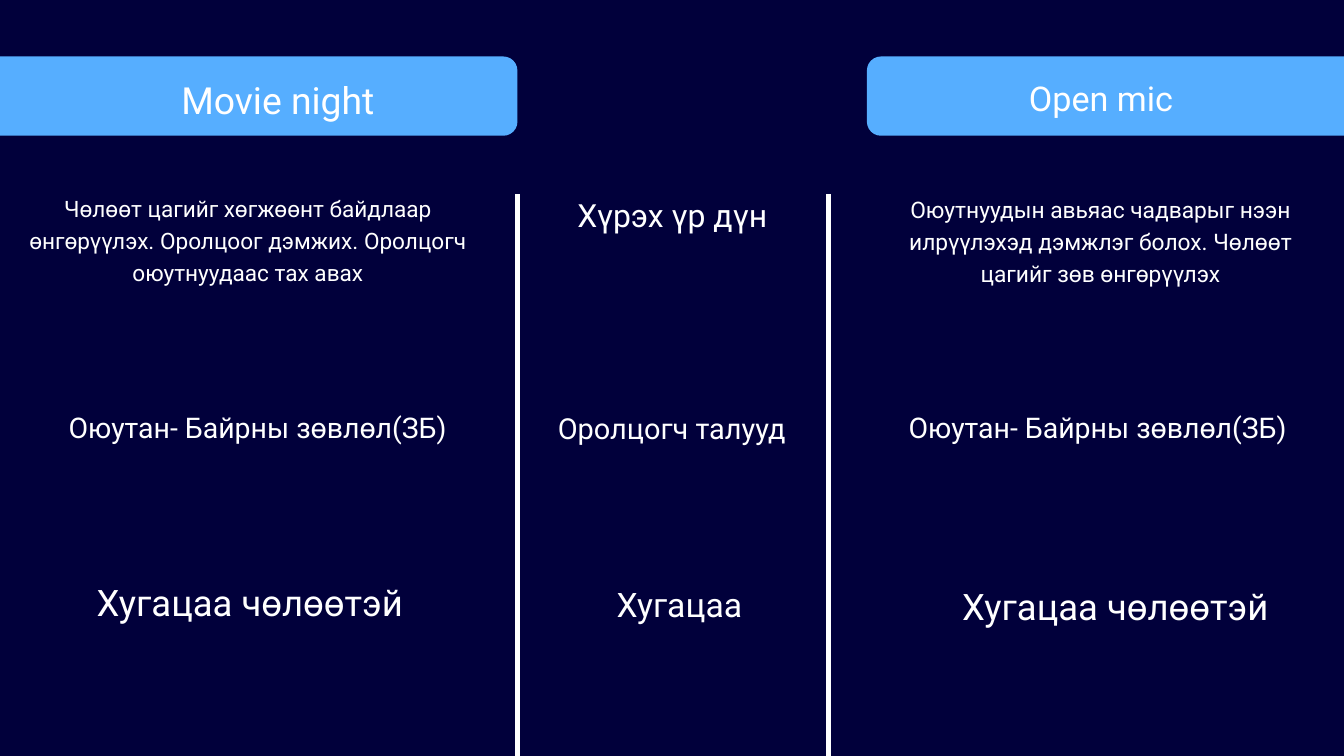
import pptx
import pptx.util
import pptx.dml.color
import pptx.enum.shapes
import pptx.enum.text
import pptx.oxml.ns
import lxml.etree

Inches = pptx.util.Inches
Pt = pptx.util.Pt


def color(hex_string):
    return pptx.dml.color.RGBColor.from_string(hex_string)


NAVY, SKY, WHITE = "01003B", "56AEFF", "FFFFFF"
LINE_SPACING = 1.4
BANNER_WIDTH, BANNER_HEIGHT, BANNER_RADIUS = 8.41, 1.18, 0.21
COUNCIL = "Оюутан- Байрны зөвлөл(ЗБ)"
FREE_TIME = "Хугацаа чөлөөтэй"

deck = pptx.Presentation()
deck.slide_width = Inches(20)
deck.slide_height = Inches(11.25)
page = deck.slides.add_slide(deck.slide_layouts[6])
page.background.fill.solid()
page.background.fill.fore_color.rgb = color(NAVY)

for x in (7.7, 12.33):
    divider = page.shapes.add_connector(
        pptx.enum.shapes.MSO_CONNECTOR.STRAIGHT,
        Inches(x), Inches(14.13), Inches(x), Inches(2.88))
    divider.line.color.rgb = color(WHITE)
    divider.line.width = Pt(5.25)
    properties = divider._element.spPr
    lxml.etree.SubElement(properties, pptx.oxml.ns.qn("a:effectLst"))

for left in (-0.71, 12.9):
    banner = page.shapes.add_shape(
        pptx.enum.shapes.MSO_SHAPE.ROUNDED_RECTANGLE,
        Inches(left), Inches(0.84), Inches(BANNER_WIDTH), Inches(BANNER_HEIGHT))
    banner.adjustments[0] = BANNER_RADIUS / BANNER_HEIGHT
    banner.shadow.inherit = False
    banner.fill.solid()
    banner.fill.fore_color.rgb = color(SKY)
    banner.line.fill.background()

labels = [
    ("Movie night", 40, 2.53, 1.03, 3.21, 0.76),
    ("Open mic", 36.6, 15.2, 1.05, 2.37, 0.68),
    ("Чөлөөт цагийг хөгжөөнт байдлаар өнгөрүүлэх. Оролцоог дэмжих. "
     "Оролцогч оюутнуудаас тах авах", 24.2, 0.42, 2.84, 6.54, 1.38),
    ("Хүрэх үр дүн", 34.2, 8.45, 2.82, 3.11, 0.63),
    ("Оюутнуудын авьяас чадварыг нээн илрүүлэхэд дэмжлэг болох. "
     "Чөлөөт цагийг зөв өнгөрүүлэх", 24.4, 13.3, 2.84, 6.15, 1.38),
    (COUNCIL, 30.5, 0.72, 6.02, 6.23, 0.57),
    ("Оролцогч талууд", 31, 7.7, 6.02, 4.59, 0.58),
    (COUNCIL, 30.5, 13.22, 6.02, 6.23, 0.57),
    (FREE_TIME, 39.1, 1.17, 8.53, 5.1, 0.73),
    ("Хугацаа", 36.1, 8.45, 8.59, 3.32, 0.68),
    (FREE_TIME, 39.1, 14.05, 8.58, 5.1, 0.73),
]
for text, size, left, top, width, height in labels:
    box = page.shapes.add_textbox(
        Inches(left), Inches(top), Inches(width), Inches(height))
    frame = box.text_frame
    frame.word_wrap = True
    frame.auto_size = pptx.enum.text.MSO_AUTO_SIZE.SHAPE_TO_FIT_TEXT
    frame.margin_left = frame.margin_right = 0
    frame.margin_top = frame.margin_bottom = 0
    para = frame.paragraphs[0]
    para.text = text
    para.alignment = pptx.enum.text.PP_ALIGN.CENTER
    para.line_spacing = Pt(round(size * LINE_SPACING, 1))
    para.font.name = "Roboto"
    para.font.size = Pt(size)
    para.font.color.rgb = color(WHITE)

deck.save("out.pptx")
